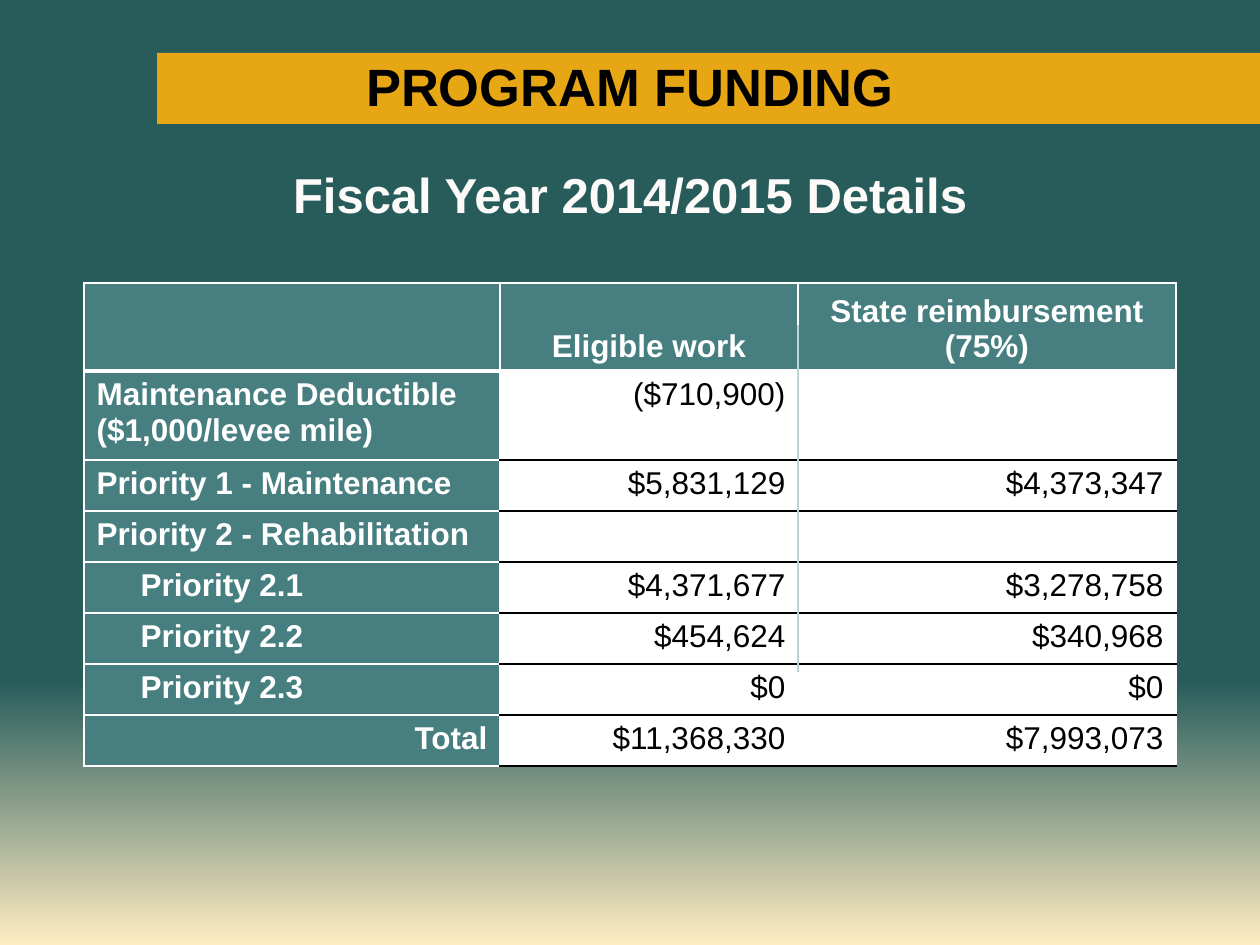
from dataclasses import dataclass

from lxml import etree
from pptx import Presentation
from pptx.dml.color import RGBColor
from pptx.enum.shapes import MSO_CONNECTOR, MSO_SHAPE
from pptx.enum.text import MSO_ANCHOR, MSO_AUTO_SIZE, PP_ALIGN
from pptx.oxml.ns import qn
from pptx.util import Pt

RECTANGLE = MSO_SHAPE.RECTANGLE
STRAIGHT = MSO_CONNECTOR.STRAIGHT
LEFT, CENTER, RIGHT = PP_ALIGN.LEFT, PP_ALIGN.CENTER, PP_ALIGN.RIGHT
TOP, MIDDLE, BOTTOM = MSO_ANCHOR.TOP, MSO_ANCHOR.MIDDLE, MSO_ANCHOR.BOTTOM
NO_AUTOFIT = MSO_AUTO_SIZE.NONE

EMU_PER_PX = 914400 / 126
WHITE, BLACK = "FFFFFF", "000000"
TEAL, DARK_TEAL = "477F80", "275C5B"
GOLD, CREAM = "E7A614", "FFECC2"
OFF_WHITE, PALE_BLUE = "FCFBF9", "B6D6D8"
SUBITEM_INDENT = 44
COLUMN_WIDTHS = [416, 298, 378]
ROW_HEIGHTS = [88, 89] + [51] * 6


@dataclass
class FundingRow:
    label: str
    eligible: str = ""
    reimbursed: str = ""
    indent: int = 0
    align: PP_ALIGN = LEFT


@dataclass
class Border:
    color: str = WHITE
    points: int = 1


FUNDING_ROWS = [
    FundingRow("Maintenance Deductible ($1,000/levee mile)", "($710,900)"),
    FundingRow("Priority 1 - Maintenance", "$5,831,129", "$4,373,347"),
    FundingRow("Priority 2 - Rehabilitation"),
    FundingRow("Priority 2.1", "$4,371,677", "$3,278,758", SUBITEM_INDENT),
    FundingRow("Priority 2.2", "$454,624", "$340,968", SUBITEM_INDENT),
    FundingRow("Priority 2.3", "$0", "$0", SUBITEM_INDENT),
    FundingRow("Total", "$11,368,330", "$7,993,073", align=RIGHT),
]


def px(length: int) -> int:
    return round(length * EMU_PER_PX)


def rgb(color: str) -> RGBColor:
    return RGBColor.from_string(color)


def write(frame, text: str, *, size=18, color=WHITE, bold=True, align=LEFT, indent=0):
    for number, line in enumerate(text.split("\n")):
        para = frame.add_paragraph() if number else frame.paragraphs[0]
        properties = para._p.get_or_add_pPr()
        properties.set("marL", str(px(indent)))
        properties.set("indent", "0")
        etree.SubElement(properties, qn("a:buNone"))
        para.alignment = align
        para.space_before = Pt(0)
        span = para.add_run()
        span.text = line
        span.font.name = "Arial"
        span.font.size = Pt(size)
        span.font.bold = bold
        span.font.color.rgb = rgb(color)


def place_text(box, text: str, top: int, height: int, **text_format):
    box.left, box.top = px(0), px(top)
    box.width, box.height = px(1260), px(height)
    frame = box.text_frame
    frame.word_wrap = True
    frame.auto_size = NO_AUTOFIT
    frame.vertical_anchor = MIDDLE
    write(frame, text, align=CENTER, **text_format)


def add_border(cell, side: str, border: Border):
    line = etree.SubElement(cell._tc.get_or_add_tcPr(), qn(f"a:ln{side}"))
    line.set("w", str(Pt(border.points)))
    fill = etree.SubElement(line, qn("a:solidFill"))
    etree.SubElement(fill, qn("a:srgbClr")).set("val", border.color)


def fill_cell(cell, text: str, fill: str, top: Border, bottom: Border,
              anchor: MSO_ANCHOR = TOP, **text_format):
    for side, border in zip("LRTB", (Border(), Border(), top, bottom)):
        add_border(cell, side, border)
    cell.fill.solid()
    cell.fill.fore_color.rgb = rgb(fill)
    cell.vertical_anchor = anchor
    if text:
        write(cell.text_frame, text, **text_format)


def paint_background(page):
    fill = page.background.fill
    fill.gradient()
    fill.gradient_angle = 270
    stops = zip(fill.gradient_stops, (0.72, 1), (DARK_TEAL, CREAM))
    for stop, position, color in stops:
        stop.position = position
        stop.color.rgb = rgb(color)


def add_title_band(page):
    band = page.shapes.add_shape(RECTANGLE, px(157), px(53), px(1103), px(71))
    band.shadow.inherit = False
    band.fill.solid()
    band.fill.fore_color.rgb = rgb(GOLD)
    band.line.fill.background()
    page.shapes.title.element.addprevious(band.element)


def add_funding_table(page):
    frame = page.shapes.add_table(len(ROW_HEIGHTS), len(COLUMN_WIDTHS), px(84), px(283),
                                  px(sum(COLUMN_WIDTHS)), px(sum(ROW_HEIGHTS)))
    table = frame.table
    for column, width in zip(table.columns, COLUMN_WIDTHS):
        column.width = px(width)
    for row, height in zip(table.rows, ROW_HEIGHTS):
        row.height = px(height)

    thin, heavy, rule = Border(), Border(points=3), Border(BLACK)
    headings = ["", "Eligible work", "State reimbursement\n(75%)"]
    for column, heading in enumerate(headings):
        fill_cell(table.cell(0, column), heading, TEAL, thin, heavy, BOTTOM, align=CENTER)
    for number, row in enumerate(FUNDING_ROWS, start=1):
        first = number == 1
        fill_cell(table.cell(number, 0), row.label, TEAL, heavy if first else thin, thin,
                  align=row.align, indent=row.indent)
        for column, amount in enumerate((row.eligible, row.reimbursed), start=1):
            fill_cell(table.cell(number, column), amount, WHITE, heavy if first else rule,
                      rule, color=BLACK, bold=False, align=RIGHT)


def add_divider(page):
    divider = page.shapes.add_connector(STRAIGHT, px(798), px(325), px(798), px(672))
    divider.line.color.rgb = rgb(PALE_BLUE)
    divider.line.width = Pt(0.75)
    etree.SubElement(divider.element.spPr, qn("a:effectLst"))


def main():
    deck = Presentation()
    deck.slide_width, deck.slide_height = px(1260), px(945)
    page = deck.slides.add_slide(deck.slide_layouts[1])
    paint_background(page)
    add_title_band(page)
    title, subtitle = page.shapes.title, page.placeholders[1]
    place_text(title, "PROGRAM FUNDING", 53, 71, size=30, color=BLACK)
    title.text_frame.paragraphs[0].line_spacing = Pt(33)
    place_text(subtitle, "Fiscal Year 2014/2015 Details", 157, 73, size=28, color=OFF_WHITE)
    add_funding_table(page)
    add_divider(page)
    deck.save("out.pptx")


if __name__ == "__main__":
    main()
